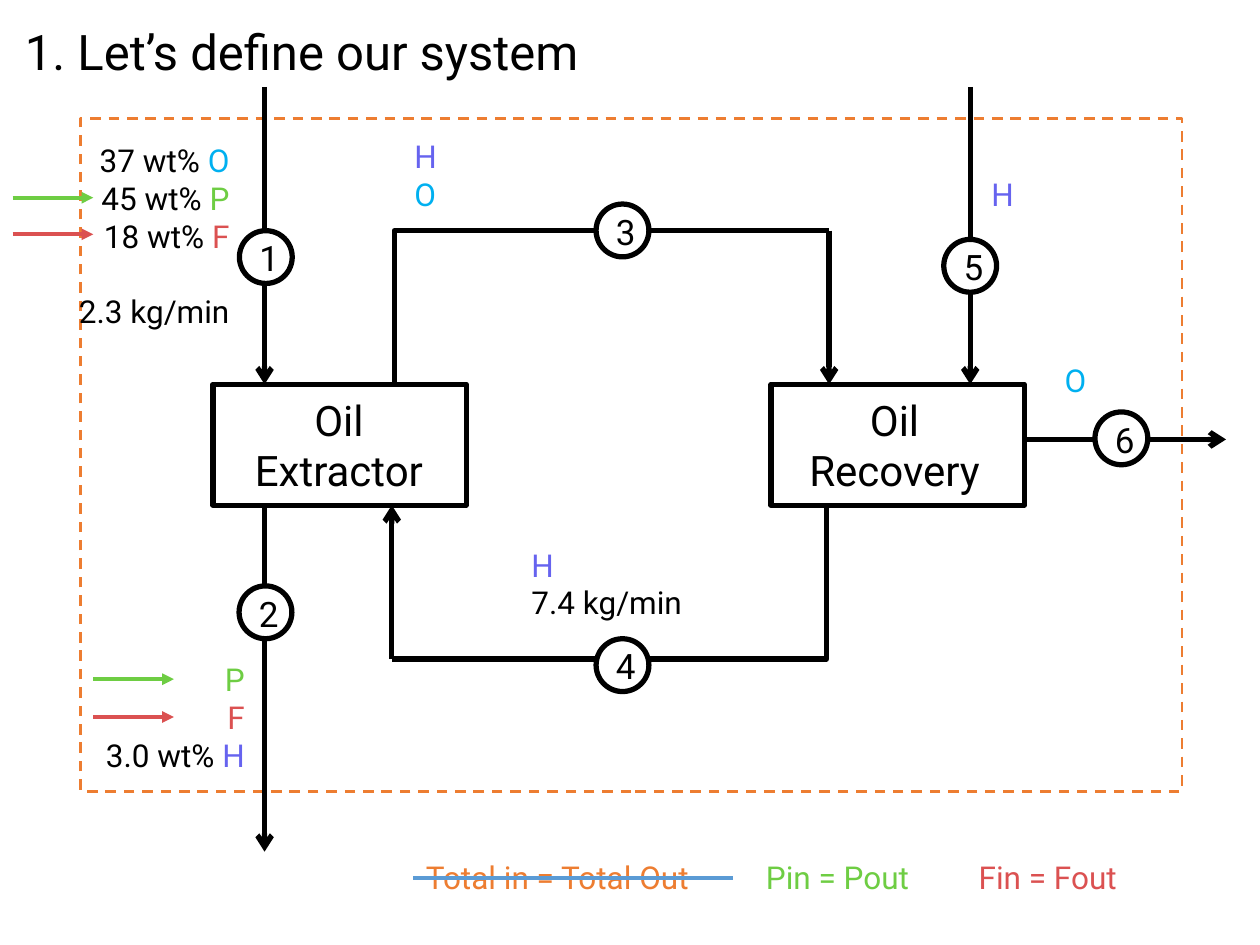
import pptx
import pptx.util
import pptx.dml.color
import pptx.enum.dml
import pptx.enum.shapes
import pptx.enum.text
import pptx.oxml
import pptx.oxml.ns
from lxml import etree

Pt = pptx.util.Pt
RGBColor = pptx.dml.color.RGBColor
MSO_SHAPE = pptx.enum.shapes.MSO_SHAPE
MSO_CONNECTOR = pptx.enum.shapes.MSO_CONNECTOR
PP_ALIGN = pptx.enum.text.PP_ALIGN
MSO_ANCHOR = pptx.enum.text.MSO_ANCHOR
qn = pptx.oxml.ns.qn

BLACK = RGBColor(0x00, 0x00, 0x00)
WHITE = RGBColor(0xFF, 0xFF, 0xFF)
ORANGE = RGBColor(0xED, 0x7D, 0x31)
STRIKE_BLUE = RGBColor(0x5B, 0x9B, 0xD5)
OIL = RGBColor(0x00, 0xB0, 0xF0)
PROTEIN = RGBColor(0x6E, 0xCD, 0x43)
FIBER = RGBColor(0xDB, 0x51, 0x51)
HEXANE = RGBColor(0x66, 0x63, 0xEF)

deck = pptx.Presentation()
deck.slide_width, deck.slide_height = Pt(720), Pt(540)
slide = deck.slides.add_slide(deck.slide_layouts[6])


def add_label(left, top, width, height, lines, size=18, align=PP_ALIGN.LEFT):
    label = slide.shapes.add_textbox(Pt(left), Pt(top), Pt(width), Pt(height))
    frame = label.text_frame
    frame.word_wrap = True
    for index, pieces in enumerate(lines):
        paragraph = frame.paragraphs[0] if index == 0 else frame.add_paragraph()
        paragraph.alignment = align
        for text, color in pieces:
            run = paragraph.add_run()
            run.text = text
            run.font.name = "Roboto"
            run.font.size = Pt(size)
            run.font.color.rgb = color
    return frame


def add_line(x1, y1, x2, y2, color=BLACK, weight=3, head=None, kind=MSO_CONNECTOR.STRAIGHT):
    line = slide.shapes.add_connector(kind, Pt(x1), Pt(y1), Pt(x2), Pt(y2))
    line.line.color.rgb = color
    line.line.width = Pt(weight)
    if head:
        etree.SubElement(line.line._get_or_add_ln(), qn("a:tailEnd"), type=head)
    etree.SubElement(line._element.spPr, qn("a:effectLst"))
    return line


add_label(7.2, 8.6, 415.4, 41, [[("1. Let’s define our system", BLACK)]], 28)

boundary = slide.shapes.add_shape(MSO_SHAPE.RECTANGLE, Pt(46.1), Pt(67.7), Pt(629.3), Pt(384.5))
boundary.shadow.inherit = False
boundary.fill.background()
boundary.line.color.rgb = ORANGE
boundary.line.width = Pt(1.5)
boundary.line.dash_style = pptx.enum.dml.MSO_LINE.DASH

UNIT_TOP, UNIT_BOTTOM = 219.6, 288.7
for unit_left, name_left, name in [(121.7, 121.7, "Extractor"), (440.6, 439.2, "Recovery")]:
    unit = slide.shapes.add_shape(
        MSO_SHAPE.RECTANGLE, Pt(unit_left), Pt(UNIT_TOP), Pt(144.7), Pt(UNIT_BOTTOM - UNIT_TOP))
    unit.shadow.inherit = False
    unit.fill.background()
    unit.line.color.rgb = BLACK
    unit.line.width = Pt(3)
    add_label(name_left, 221.8, 144, 65.5, [[("Oil", BLACK)], [(name, BLACK)]], 24, PP_ALIGN.CENTER)

for x1, y1, x2, y2 in [
    (151.2, 49.7, 151.2, UNIT_TOP),
    (151.2, UNIT_BOTTOM, 151.2, 486.7),
    (473.8, 131.8, 473.8, UNIT_TOP),
    (223.9, 376.6, 223.9, UNIT_BOTTOM),
    (554.4, 49.7, 554.4, UNIT_TOP),
    (585, 251.1, 700.6, 251.1),
]:
    add_line(x1, y1, x2, y2, head="arrow")

for x1, y1, x2, y2 in [(223.9, UNIT_TOP, 473.8, 131.8), (473.8, UNIT_BOTTOM, 223.9, 376.6)]:
    bend = add_line(x1, y1, x2, y2, kind=MSO_CONNECTOR.ELBOW)
    guides = bend._element.spPr.find(qn("a:prstGeom")).get_or_add_avLst()
    etree.SubElement(guides, qn("a:gd"), name="adj1", fmla="val 600")

STREAM_SIZE = 30.2
for number, left, top in [
    ("1", 136.8, 131.8), ("2", 136.6, 334.8), ("3", 340.6, 116.6),
    ("4", 340.6, 365), ("5", 539.3, 136.8), ("6", 625.7, 235.4),
]:
    stream = slide.shapes.add_shape(
        MSO_SHAPE.OVAL, Pt(left), Pt(top), Pt(STREAM_SIZE), Pt(STREAM_SIZE))
    stream.shadow.inherit = False
    stream.fill.solid()
    stream.fill.fore_color.rgb = WHITE
    stream.line.color.rgb = BLACK
    stream.line.width = Pt(3)
    add_label(left + 4.3, top, 21.6, 31.5, [[(number, BLACK)]], 20, PP_ALIGN.CENTER)

feed = add_label(0, 54, 138.2, 138.2, [
    [("37 wt% ", BLACK), ("O", OIL)],
    [("45 wt% ", BLACK), ("P", PROTEIN)],
    [("18 wt% ", BLACK), ("F", FIBER)],
    [("2.3 kg/min", BLACK)],
], align=PP_ALIGN.RIGHT)
feed.vertical_anchor = MSO_ANCHOR.BOTTOM
feed.paragraphs[3].space_before = Pt(21.6)

add_label(4.3, 373.7, 142.6, 72.7, [
    [("P", PROTEIN)],
    [("F", FIBER)],
    [("3.0 wt% ", BLACK), ("H", HEXANE)],
], align=PP_ALIGN.RIGHT)
add_label(229.7, 74.9, 133.2, 51.1, [[("H", HEXANE)], [("O", OIL)]])
add_label(296.6, 308.2, 133.2, 51.1, [[("H", HEXANE)], [("7.4 kg/min", BLACK)]])
add_label(559.4, 96.5, 133.2, 28.8, [[("H", HEXANE)]])
add_label(601.2, 203, 66.2, 28.8, [[("O", OIL)]])

for left, top, color in [
    (7.2, 113, PROTEIN), (7.2, 133.9, FIBER),
    (53.3, 388.1, PROTEIN), (53.3, 409.7, FIBER),
]:
    add_line(left, top, left + 46.1, top, color, 2.25, "triangle")

for left, width, balance, color in [
    (236.2, 224.6, "Total in = Total Out", ORANGE),
    (430.6, 102.2, "Pin = Pout", PROTEIN),
    (552.2, 171.4, "Fin = Fout", FIBER),
]:
    add_label(left, 486.7, width, 28.8, [[(balance, color)]])
add_line(236.2, 501.8, 419, 501.8, STRIKE_BLUE, 2)

deck.save("out.pptx")
